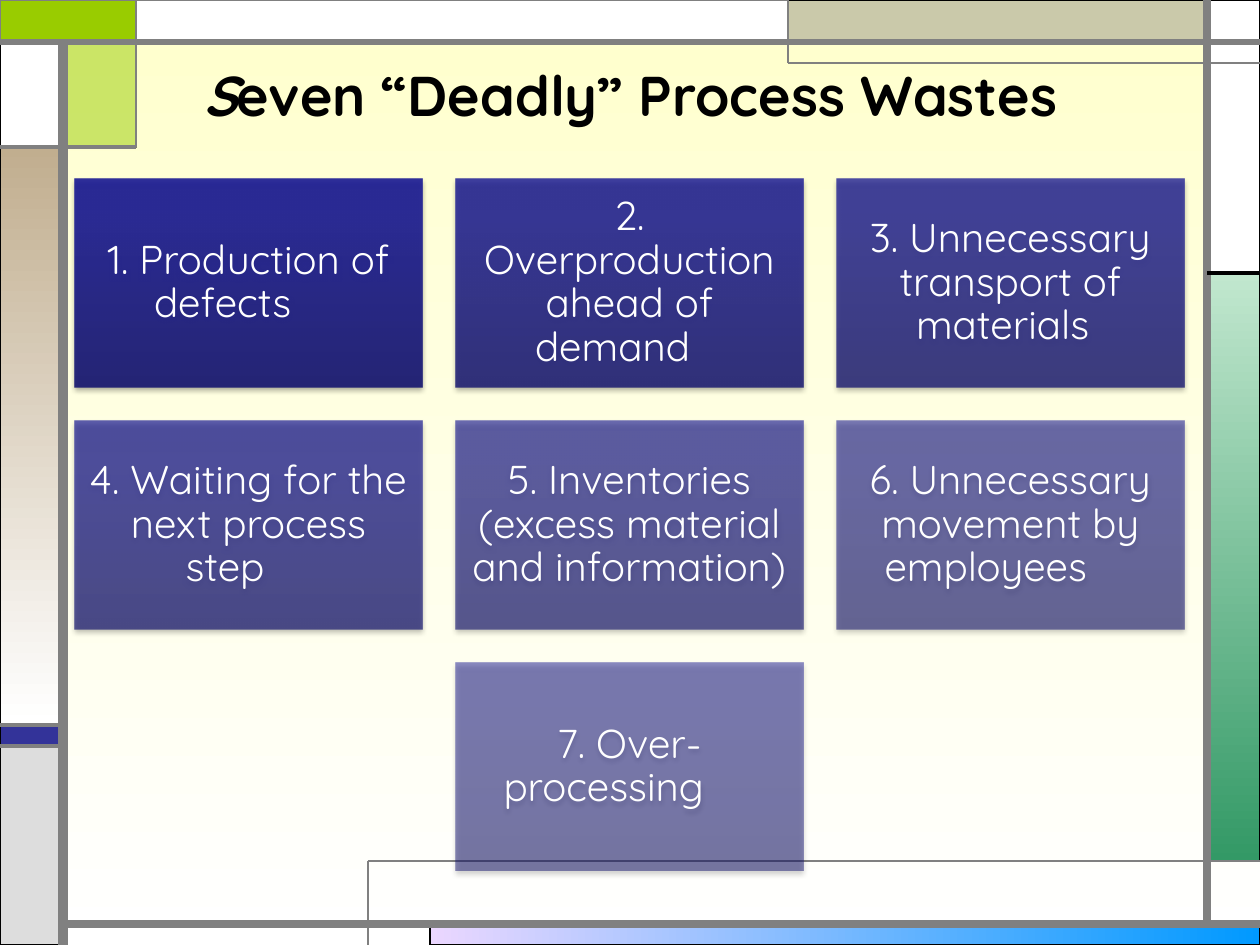
from lxml.etree import SubElement
from pptx import Presentation
from pptx.dml.color import RGBColor
from pptx.enum.shapes import MSO_CONNECTOR, MSO_SHAPE
from pptx.enum.text import MSO_ANCHOR, MSO_AUTO_SIZE, PP_ALIGN
from pptx.oxml.ns import qn
from pptx.util import Emu, Pt

EMU_PER_PX = 914400 / 126
WIDTH, HEIGHT = 1260, 945
FONT = "Quicksand"
GREY, BLACK, WHITE = "808080", "000000", "FFFFFF"

# Guides shared by the panels and rules of the frame
LEFT, RIGHT, TOP, BOTTOM = 63, 1207, 42, 924
TAB_X, TAB_Y = 136, 147
BAND_X, BAND_Y = 788, 63
STRIPE_TOP, STRIPE_BOTTOM = 725, 746
GREEN_TOP, GREEN_BOTTOM = 273, 861
FOOT_X = 368

# Edges (left, top, right, bottom), colour or gradient, gradient angle, line
PANELS = [
    ((430, BOTTOM, WIDTH, HEIGHT), ["EBD7FF", "0099FF"], 0, BLACK, 0.75),
    ((RIGHT, GREEN_TOP, WIDTH, GREEN_BOTTOM), ["C1E7CE", "339966"], 90, BLACK, 0.75),
    ((0, STRIPE_TOP, LEFT, STRIPE_BOTTOM), ["333399"], 0, BLACK, 0.75),
    ((0, STRIPE_BOTTOM, LEFT, HEIGHT), ["DDDDDD"], 0, BLACK, 0.75),
    ((RIGHT, 0, WIDTH, GREEN_TOP), [WHITE], 0, BLACK, 0.75),
    ((BAND_X, 0, RIGHT, TOP), ["CAC9AA"], 0, BLACK, 0.75),
    ((LEFT, TOP, TAB_X, TAB_Y), ["99CC00"], 0, BLACK, 0.75),
    ((0, TAB_Y, LEFT, STRIPE_TOP), ["C1AE8F", WHITE], 90, BLACK, 0.75),
    ((0, TOP, LEFT, TAB_Y), [WHITE], 0, BLACK, 0.75),
    ((0, 0, TAB_X, TOP), ["99CC00"], 0, GREY, 1.5),
    ((TAB_X, 0, BAND_X, TOP), [WHITE], 0, GREY, 0.75),
]
TINTED_PANEL = (LEFT, TOP, TAB_X, TAB_Y)

# Ends (x1, y1, x2, y2), colour, width in points
RULES = [
    ((LEFT, HEIGHT, LEFT, TOP), GREY, 6),
    ((LEFT, BOTTOM, WIDTH, BOTTOM), GREY, 4.5),
    ((RIGHT, BOTTOM, RIGHT, 0), GREY, 4.5),
    ((0, TOP, WIDTH, TOP), GREY, 3),
    ((WIDTH, BAND_Y, BAND_X, BAND_Y), GREY, 1.5),
    ((BAND_X, BAND_Y, BAND_X, 0), GREY, 1.5),
    ((RIGHT, GREEN_TOP, WIDTH, GREEN_TOP), BLACK, 2.25),
    ((TAB_X, 0, TAB_X, TAB_Y), GREY, 1.5),
    ((TAB_X, TAB_Y, 0, TAB_Y), GREY, 2.25),
    ((FOOT_X, HEIGHT, FOOT_X, GREEN_BOTTOM), GREY, 1.5),
    ((FOOT_X, GREEN_BOTTOM, WIDTH, GREEN_BOTTOM), GREY, 1.5),
    ((LEFT, STRIPE_TOP, 0, STRIPE_TOP), GREY, 2.25),
    ((LEFT, STRIPE_BOTTOM, 0, STRIPE_BOTTOM), GREY, 2.25),
]

# The trailing tab takes part in the centring of the last line
WASTES = [
    "1. Production of defects \t",
    "2. Overproduction ahead of demand \t",
    "3. Unnecessary transport of materials \t",
    "4. Waiting for the next process step \t",
    "5. Inventories (excess material and information) ",
    "6. Unnecessary movement by employees \t",
    "7. Over-processing \t",
]
CARD_STOPS = [(0, "171771"), (80, "1E1E93"), (100, "1C1C96")]


def px(length):
    return Emu(round(length * EMU_PER_PX))


def rgb(color):
    return RGBColor.from_string(color)


def add_alpha(color_element, percent):
    SubElement(color_element, qn("a:alpha"), val=str(round(percent * 1000)))


def set_gradient(fill, owner, stops, angle, alpha=100):
    """Fill with (position, colour) stops; the angle runs clockwise."""
    fill.gradient()
    fill.gradient_angle = -angle % 360
    stop_list = next(owner.iter(qn("a:gsLst")))
    stop_list.clear()
    for position, color in stops:
        stop = SubElement(stop_list, qn("a:gs"), pos=str(position * 1000))
        color_element = SubElement(stop, qn("a:srgbClr"), val=color)
        if alpha < 100:
            add_alpha(color_element, alpha)


def add_rectangle(slide, left, top, width, height):
    shape = slide.shapes.add_shape(
        MSO_SHAPE.RECTANGLE, px(left), px(top), px(width), px(height))
    shape.shadow.inherit = False
    return shape


def add_run(paragraph, text, size, color, bold=False, italic=False):
    run = paragraph.add_run()
    run.text = text
    font = run.font
    font.name, font.size, font.bold, font.italic = FONT, Pt(size), bold, italic
    font.color.rgb = rgb(color)


def add_panel(slide, edges, colors, angle, line_color, line_width):
    left, top, right, bottom = edges
    shape = add_rectangle(slide, left, top, right - left, bottom - top)
    if len(colors) == 2:
        set_gradient(shape.fill, shape.element, zip((0, 100), colors), angle)
    else:
        shape.fill.solid()
        shape.fill.fore_color.rgb = rgb(colors[0])
        if edges == TINTED_PANEL:
            add_alpha(next(shape.element.iter(qn("a:srgbClr"))), 50)
    shape.line.color.rgb = rgb(line_color)
    shape.line.width = Pt(line_width)


def add_rule(slide, ends, color, width):
    rule = slide.shapes.add_connector(MSO_CONNECTOR.STRAIGHT, *map(px, ends))
    rule.line.color.rgb = rgb(color)
    rule.line.width = Pt(width)
    SubElement(rule.element.spPr, qn("a:effectLst"))


def add_frame(slide):
    for panel in PANELS:
        add_panel(slide, *panel)
    for rule in RULES:
        add_rule(slide, *rule)


def add_title(slide, left, top, width, height):
    title = slide.shapes.title
    title.left, title.top = px(left), px(top)
    title.width, title.height = px(width), px(height)
    text_frame = title.text_frame
    text_frame.auto_size = MSO_AUTO_SIZE.NONE
    text_frame.vertical_anchor = MSO_ANCHOR.MIDDLE
    paragraph = text_frame.paragraphs[0]
    paragraph.alignment = PP_ALIGN.CENTER
    add_run(paragraph, "S", 32, BLACK, bold=True, italic=True)
    add_run(paragraph, "even “Deadly” Process Wastes", 32, BLACK, bold=True)


def add_card(slide, text, alpha, left, top, width, height):
    card = add_rectangle(slide, left, top, width, height)
    set_gradient(card.fill, card.element, CARD_STOPS, 270, alpha)
    card.line.fill.background()
    shadow = SubElement(
        card.element.spPr.find(qn("a:effectLst")), qn("a:outerShdw"),
        blurRad=str(Pt(3.1)), dist=str(Pt(1.8)), dir="5400000", rotWithShape="0")
    add_alpha(SubElement(shadow, qn("a:srgbClr"), val=BLACK), 35)

    text_frame = card.text_frame
    text_frame.word_wrap = True
    text_frame.vertical_anchor = MSO_ANCHOR.MIDDLE
    text_frame.margin_left = text_frame.margin_right = px(12)
    text_frame.margin_top = text_frame.margin_bottom = px(12)
    paragraph = text_frame.paragraphs[0]
    paragraph.alignment = PP_ALIGN.CENTER
    paragraph.line_spacing = 0.9
    paragraph.space_after = Pt(8)
    add_run(paragraph, text, 23, WHITE)


def add_card_grid(slide, left, top, width, height, columns=3, gap=34):
    """Lay the cards out in rows, the last row centred, each paler than before."""
    rows = -(-len(WASTES) // columns)
    card_width = (width - (columns - 1) * gap) // columns
    card_height = (height - (rows - 1) * gap) // rows
    for index, text in enumerate(WASTES):
        row, column = divmod(index, columns)
        in_row = min(columns, len(WASTES) - row * columns)
        column += (columns - in_row) / 2
        alpha = 90 - 40 * index / (len(WASTES) - 1)
        add_card(slide, text, alpha,
                 left + column * (card_width + gap),
                 top + row * (card_height + gap), card_width, card_height)


def main():
    presentation = Presentation()
    presentation.slide_width, presentation.slide_height = px(WIDTH), px(HEIGHT)
    slide = presentation.slides.add_slide(presentation.slide_layouts[5])
    set_gradient(slide.background.fill, slide.element,
                 [(0, "FFFFCC"), (100, WHITE)], 90)
    add_frame(slide)
    add_title(slide, 95, 63, 1071, 63)
    add_card_grid(slide, 75, 179, 1109, 692)
    presentation.save("out.pptx")


if __name__ == "__main__":
    main()
